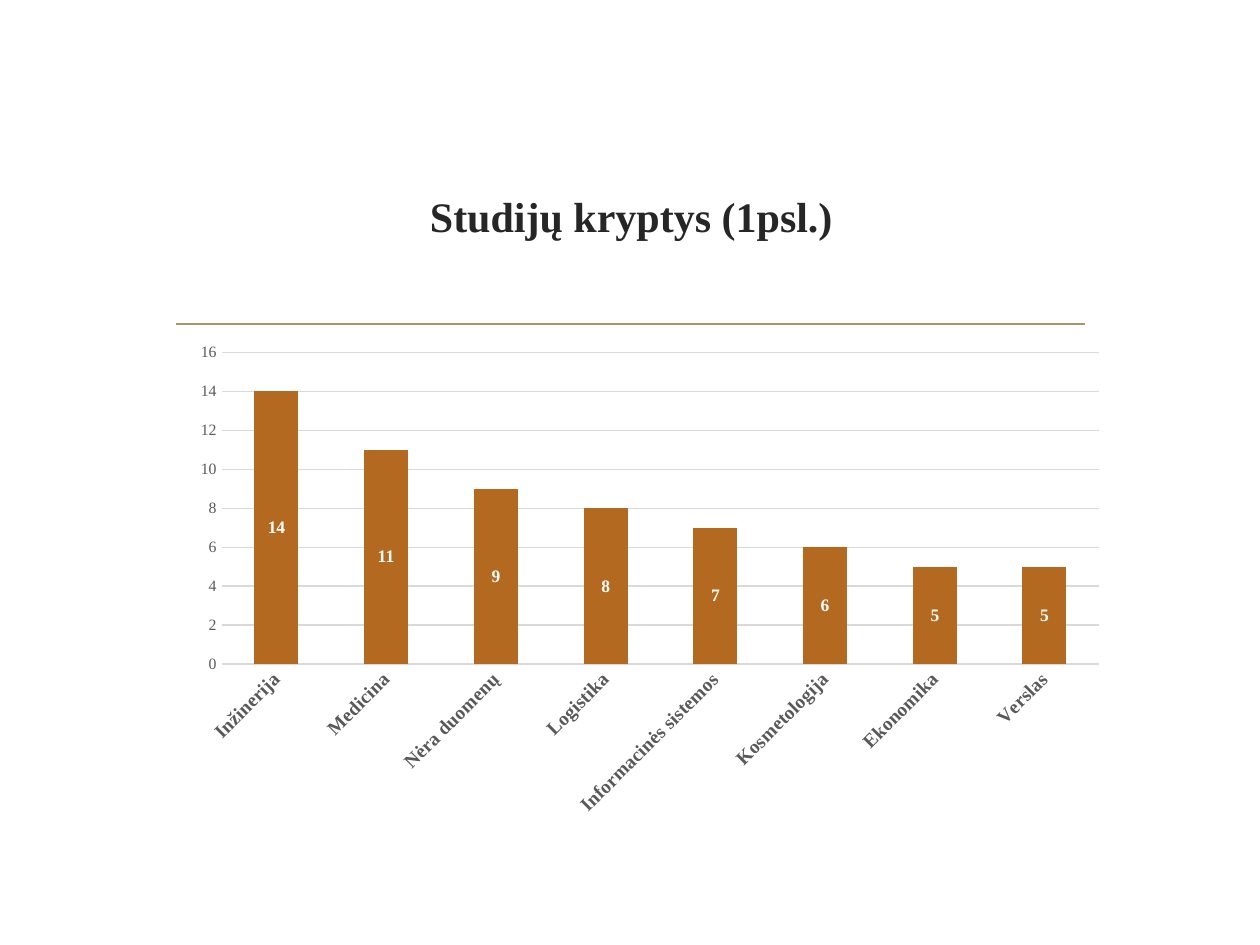
from dataclasses import dataclass

from lxml import etree
from pptx import Presentation
from pptx import util as u
from pptx.chart.data import CategoryChartData
from pptx.dml.color import RGBColor
from pptx.enum import chart as charts, shapes, text
from pptx.oxml.ns import qn


@dataclass(frozen=True)
class Theme:
    font: str = "Times New Roman"
    title_color: str = "262626"
    rule_color: str = "AB946B"
    bar_color: str = "B3691F"
    axis_color: str = "595959"
    grid_color: str = "D9D9D9"
    label_color: str = "FFFFFF"
    title_size: float = 24
    category_size: float = 11
    value_size: float = 9
    label_size: float = 10


THEME = Theme()
LEFT, WIDTH = 1.29, 7.44
STUDY_FIELDS = {
    "Inžinerija": 14,
    "Medicina": 11,
    "Nėra duomenų": 9,
    "Logistika": 8,
    "Informacinės sistemos": 7,
    "Kosmetologija": 6,
    "Ekonomika": 5,
    "Verslas": 5,
}


def style_font(font, size, color, bold=False):
    font.name = THEME.font
    font.size = u.Pt(size)
    font.bold = bold
    font.color.rgb = RGBColor.from_string(color)


def style_line(line, color, width):
    line.color.rgb = RGBColor.from_string(color)
    line.width = u.Pt(width)


def add_rule(page, left, right, top):
    rule = page.shapes.add_connector(
        shapes.MSO_CONNECTOR.STRAIGHT,
        u.Inches(left), u.Inches(top), u.Inches(right), u.Inches(top))
    style_line(rule.line, THEME.rule_color, 1.25)
    etree.SubElement(rule.element.spPr, qn("a:effectLst"))


def add_title(page, wording, top, height):
    box = page.shapes.add_textbox(
        u.Inches(LEFT), u.Inches(top), u.Inches(WIDTH), u.Inches(height))
    frame = box.text_frame
    frame.word_wrap = True
    frame.vertical_anchor = text.MSO_ANCHOR.MIDDLE
    frame.text = wording
    para = frame.paragraphs[0]
    para.alignment = text.PP_ALIGN.CENTER
    style_font(para.runs[0].font, THEME.title_size, THEME.title_color, True)


def place_plot(chart, **fractions):
    """Fix the inner plot area as fractions of the chart frame."""
    plot_area = chart.element.find(".//" + qn("c:plotArea"))
    for old in plot_area.findall(qn("c:layout")):
        plot_area.remove(old)
    layout = etree.Element(qn("c:layout"))
    plot_area.insert(0, layout)
    manual = etree.SubElement(layout, qn("c:manualLayout"))
    settings = {"layoutTarget": "inner", "xMode": "edge", "yMode": "edge", **fractions}
    for name, value in settings.items():
        etree.SubElement(manual, qn(f"c:{name}"), val=str(value))


def style_axes(chart):
    category, value = chart.category_axis, chart.value_axis
    for axis in (category, value):
        axis.major_tick_mark = axis.minor_tick_mark = charts.XL_TICK_MARK.NONE
    style_font(category.tick_labels.font, THEME.category_size, THEME.axis_color, True)
    style_font(value.tick_labels.font, THEME.value_size, THEME.axis_color)
    style_line(category.format.line, THEME.grid_color, 0.75)
    value.format.line.fill.background()
    value.minimum_scale, value.maximum_scale, value.major_unit = 0, 16, 2
    style_line(value.major_gridlines.format.line, THEME.grid_color, 0.75)
    # Slant the category names upwards by 45 degrees
    body = category.tick_labels.font._element.getparent().getparent().getparent().find(qn("a:bodyPr"))
    body.set("rot", "-2700000")
    body.set("vert", "horz")


def add_column_chart(page, counts, top, height):
    data = CategoryChartData()
    data.categories = list(counts)
    data.add_series("Series 1", list(counts.values()))
    chart = page.shapes.add_chart(
        charts.XL_CHART_TYPE.COLUMN_STACKED, u.Inches(LEFT), u.Inches(top),
        u.Inches(WIDTH), u.Inches(height), data).chart
    chart.has_title = chart.has_legend = False
    chart.font.name = THEME.font
    chart.font.size = u.Pt(THEME.label_size)
    place_plot(chart, x=0.063, y=0.019, w=0.937, h=0.603)
    style_axes(chart)

    # Bars and their values
    plot = chart.plots[0]
    plot.vary_by_categories = False
    plot.gap_width, plot.overlap = 150, 100
    fill = plot.series[0].format.fill
    fill.solid()
    fill.fore_color.rgb = RGBColor.from_string(THEME.bar_color)
    plot.has_data_labels = True
    labels = plot.data_labels
    labels.show_value = True
    labels.position = charts.XL_LABEL_POSITION.CENTER
    style_font(labels.font, THEME.label_size, THEME.label_color, True)


def main():
    deck = Presentation()
    deck.slide_width, deck.slide_height = u.Inches(10), u.Inches(7.5)
    page = deck.slides.add_slide(deck.slide_layouts[6])

    # Heading above the rule
    add_rule(page, left=1.4, right=8.61, top=2.57)
    add_title(page, "Studijų kryptys (1psl.)", top=1, height=1.43)

    # Chart below the rule
    add_column_chart(page, STUDY_FIELDS, top=2.72, height=4.1)
    deck.save("out.pptx")


if __name__ == "__main__":
    main()
